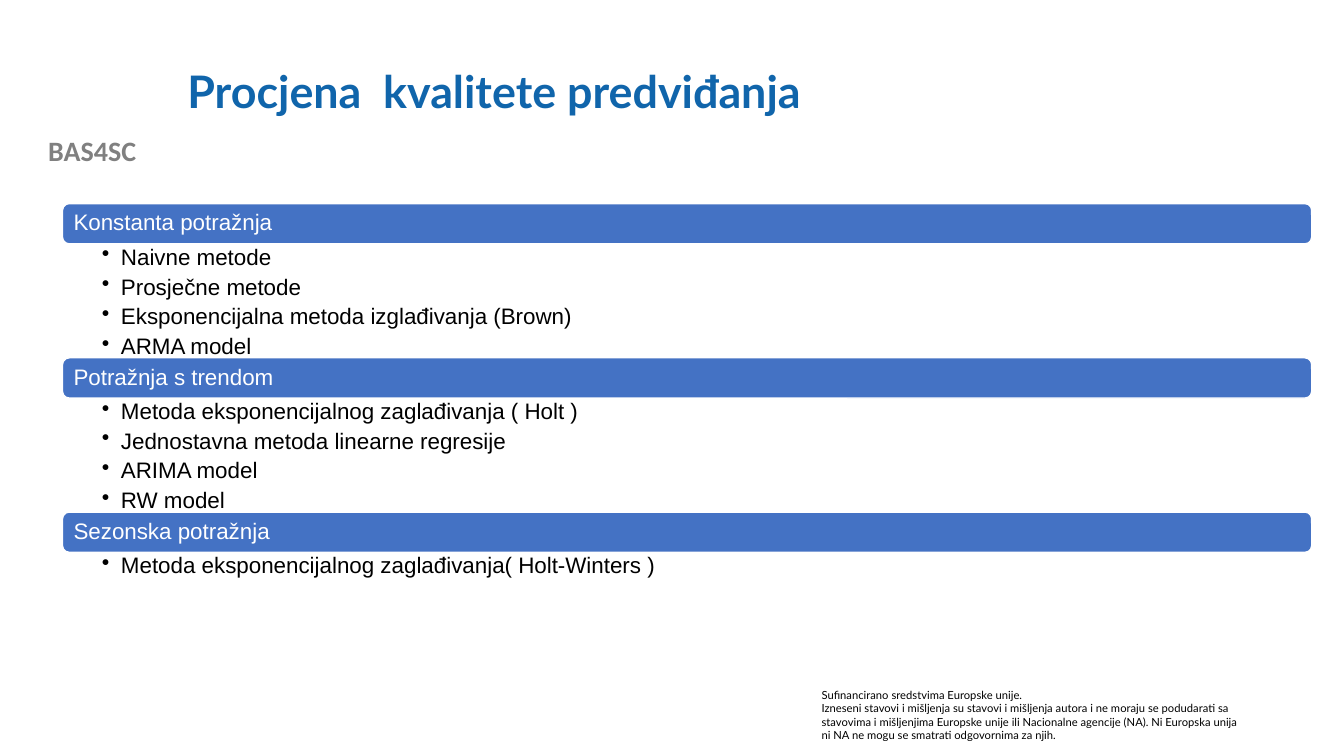
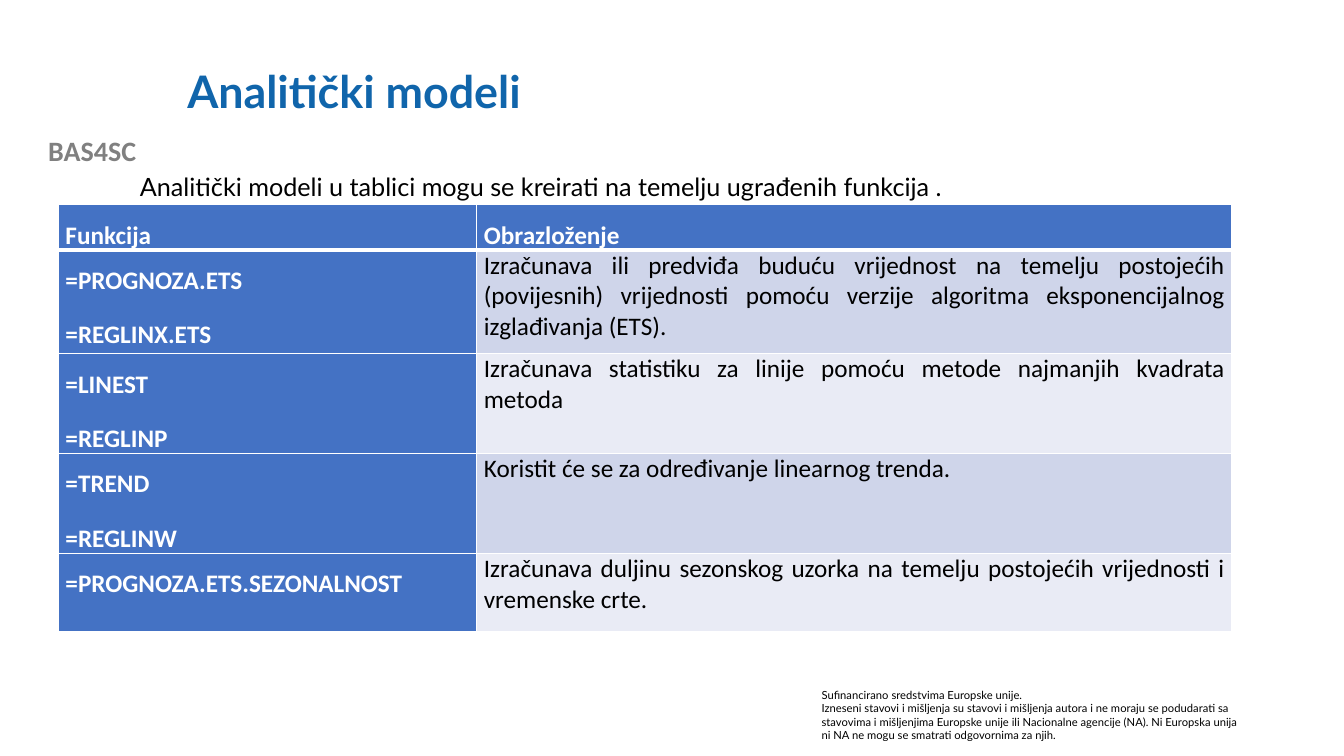
import pptx
import pptx.util
import pptx.dml.color
import pptx.enum.shapes
import pptx.enum.text
import pptx.oxml
import pptx.oxml.ns

Pt = pptx.util.Pt
Inches = pptx.util.Inches
RGB = pptx.dml.color.RGBColor.from_string
ALIGN = pptx.enum.text.PP_ALIGN
ANCHOR = pptx.enum.text.MSO_ANCHOR

COLORS = {
    "title": "1065AB", "tag": "808080", "text": "000000", "white": "FFFFFF",
    "band": "4472C4", "odd_row": "CFD5EA", "even_row": "E9EBF5",
}
FONTS = {
    "title": {"name": "Lato", "size": Pt(32), "bold": True, "color": "title"},
    "tag": {"name": "Calibri", "size": Pt(20), "bold": True, "color": "tag"},
    "footer": {"name": "Lato", "size": Pt(8), "color": "text"},
    "intro": {"name": "Lato", "size": Pt(18), "color": "text"},
    "band": {"name": "Arial", "size": Pt(16), "color": "white"},
    "list": {"name": "Arial", "size": Pt(16), "color": "text"},
    "key": {"name": "Calibri", "size": Pt(18), "bold": True, "color": "white"},
    "cell": {"name": "Calibri", "size": Pt(18), "bold": False, "color": "text"},
}
PARAS = {
    "title": {"line_spacing": 0.9},
    "tag": {"alignment": ALIGN.CENTER},
    "intro": {"alignment": ALIGN.JUSTIFY, "line_spacing": 1.5, "space_after": Pt(6)},
    "band": {"alignment": ALIGN.LEFT, "line_spacing": 0.9},
    "list": {"line_spacing": 0.9, "space_after": Pt(4)},
    "key": {"alignment": ALIGN.JUSTIFY, "line_spacing": 1.5, "space_after": Pt(6)},
    "cell": {"alignment": ALIGN.JUSTIFY},
}
INDENTS = {"intro": (0, 0.49), "list": (0.19, -0.19)}
FRAMES = {
    "title": {"vertical_anchor": ANCHOR.MIDDLE},
    "band": {"vertical_anchor": ANCHOR.MIDDLE, "margin_left": Inches(0.09)},
    "list": {"margin_left": Inches(0.39), "margin_right": Inches(0.12),
             "margin_top": Inches(0.02), "margin_bottom": Inches(0.02)},
}

prs = pptx.Presentation()
prs.slide_width = Inches(13.33)
prs.slide_height = Inches(7.5)


def place(x, y, w, h):
    pw, ph = prs.slide_width / 100, prs.slide_height / 100
    return [round(v) for v in (x * pw, y * ph, w * pw, h * ph)]


def write(tf, lines, style):
    tf.word_wrap = True
    for name, value in FRAMES.get(style, {}).items():
        setattr(tf, name, value)
    for i, line in enumerate(lines):
        p = tf.paragraphs[0] if i == 0 else tf.add_paragraph()
        if style in INDENTS:
            pPr = p._p.get_or_add_pPr()
            for name, value in zip(("marL", "indent"), INDENTS[style]):
                pPr.set(name, str(Inches(value)))
            if style == "list":
                bullet = pptx.oxml.ns.qn("a:buChar")
                pPr.makeelement(bullet)
                pPr.append(pptx.oxml.parse_xml(
                    f'<a:buChar {pptx.oxml.ns.nsdecls("a")} char="•"/>'))
        for name, value in PARAS.get(style, {}).items():
            setattr(p, name, value)
        r = p.add_run()
        r.text = line
        for name, value in FONTS[style].items():
            if name == "color":
                r.font.color.rgb = RGB(COLORS[value])
            else:
                setattr(r.font, name, value)


shared = [
    ("tag", (0, 17.07, 13.73, 5.87), ["BAS4SC"]),
    ("footer", (60.39, 90.4, 32.78, 8.53), [
        "Sufinancirano sredstvima Europske unije.",
        "Izneseni stavovi i mišljenja su stavovi i mišljenja autora i ne moraju se podudarati sa "
        "stavovima i mišljenjima Europske unije ili Nacionalne agencije (NA). Ni Europska unija "
        "ni NA ne mogu se smatrati odgovornima za njih.",
    ]),
]
slides = []
for title in ["Procjena  kvalitete predviđanja", "Analitički modeli"]:
    s = prs.slides.add_slide(prs.slide_layouts[6])
    for style, area, lines in shared + [("title", (13.2, 5.33, 79.97, 14.21), [title])]:
        write(s.shapes.add_textbox(*place(*area)).text_frame, lines, style)
    slides.append(s)

s = slides[0]
groups = [
    ("Konstanta potražnja", [
        "Naivne metode", "Prosječne metode",
        "Eksponencijalna metoda izglađivanja (Brown)", "ARMA model"]),
    ("Potražnja s trendom", [
        "Metoda eksponencijalnog zaglađivanja ( Holt )",
        "Jednostavna metoda linearne regresije", "ARIMA model", "RW model"]),
    ("Sezonska potražnja", ["Metoda eksponencijalnog zaglađivanja( Holt-Winters )"]),
]
left, top, width, band_h, pitch = 4.65, 26.93, 92.95, 5.33, 20.4
for i, (heading, methods) in enumerate(groups):
    y = top + i * pitch
    sp = s.shapes.add_shape(pptx.enum.shapes.MSO_SHAPE.ROUNDED_RECTANGLE,
                            *place(left, y, width, band_h))
    sp.shadow.inherit = False
    sp.fill.solid()
    sp.fill.fore_color.rgb = RGB(COLORS["band"])
    sp.line.color.rgb = RGB(COLORS["white"])
    sp.line.width = Pt(1)
    write(sp.text_frame, [heading], "band")
    list_h = (pitch - band_h) * len(methods) / 4
    tb = s.shapes.add_textbox(*place(left, y + band_h, width, list_h))
    write(tb.text_frame, methods, "list")

s = slides[1]
tb = s.shapes.add_textbox(*place(6, 20, 89.72, 13.73))
write(tb.text_frame,
      ["Analitički modeli u tablici mogu se kreirati na temelju ugrađenih funkcija ."], "intro")

rows = [
    (["Funkcija"], "Obrazloženje"),
    (["=PROGNOZA.ETS", "=REGLINX.ETS"],
     "Izračunava ili predviđa buduću vrijednost na temelju postojećih (povijesnih) vrijednosti "
     "pomoću verzije algoritma eksponencijalnog izglađivanja (ETS)."),
    (["=LINEST", "=REGLINP"],
     "Izračunava statistiku za linije pomoću metode najmanjih kvadrata metoda"),
    (["=TREND", "=REGLINW"], "Koristit će se za određivanje linearnog trenda."),
    (["=PROGNOZA.ETS.SEZONALNOST"],
     "Izračunava duljinu sezonskog uzorka na temelju postojećih vrijednosti i vremenske crte."),
]
col_shares = [31.13, 56.19]
row_shares = [6, 13.73, 13.2, 13.2, 10.4]
area = place(4.35, 27.07, sum(col_shares), sum(row_shares))
table = s.shapes.add_table(len(rows), len(col_shares), *area).table
for col, share in zip(table.columns, col_shares):
    col.width = round(prs.slide_width * share / 100)
for row, share in zip(table.rows, row_shares):
    row.height = round(prs.slide_height * share / 100)

for i, (functions, meaning) in enumerate(rows):
    for j, lines in enumerate([functions, [meaning]]):
        cell = table.cell(i, j)
        is_key = i == 0 or j == 0
        fill = "band" if is_key else "odd_row" if i % 2 else "even_row"
        margins = {"margin_left": 0.07, "margin_right": 0.07, "margin_top": 0, "margin_bottom": 0}
        for name, value in margins.items():
            setattr(cell, name, Inches(value))
        cell.fill.solid()
        cell.fill.fore_color.rgb = RGB(COLORS[fill])
        write(cell.text_frame, lines, "key" if is_key else "cell")
        tcPr = cell._tc.get_or_add_tcPr()
        for k, side in enumerate("LRTB"):
            thick = (i, side) in [(0, "B"), (1, "T")]
            tcPr.insert(k, pptx.oxml.parse_xml(
                f'<a:ln{side} {pptx.oxml.ns.nsdecls("a")} w="{Pt(3 if thick else 1)}">'
                f'<a:solidFill><a:srgbClr val="{COLORS["white"]}"/></a:solidFill></a:ln{side}>'))

prs.save("out.pptx")
